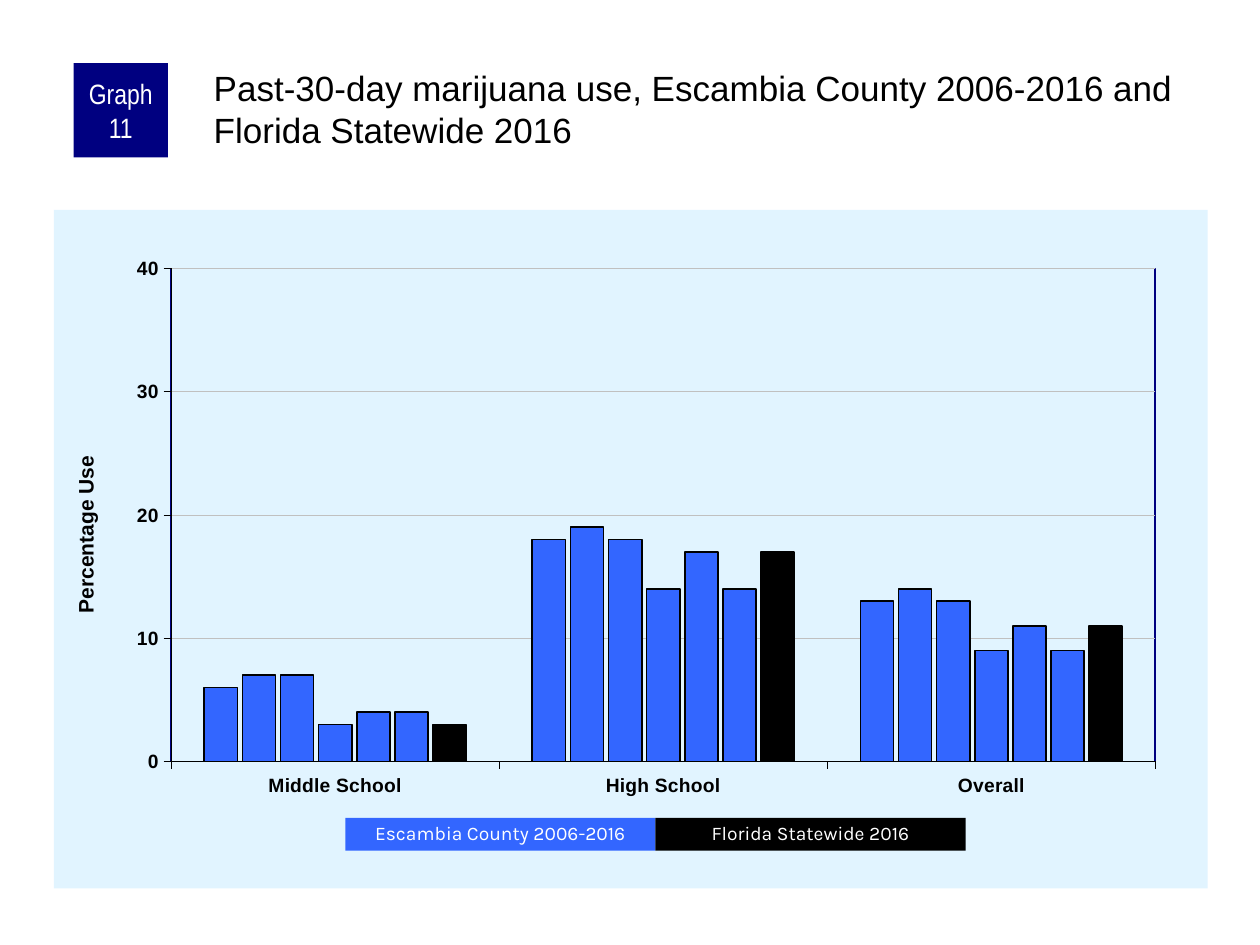
from dataclasses import dataclass

from lxml.etree import SubElement
from pptx import Presentation
from pptx.chart.data import CategoryChartData
from pptx.dml.color import RGBColor
from pptx.enum.chart import XL_CHART_TYPE, XL_TICK_MARK
from pptx.enum.shapes import MSO_SHAPE
from pptx.enum.text import MSO_ANCHOR, PP_ALIGN
from pptx.oxml import parse_xml
from pptx.oxml.ns import nsdecls, qn
from pptx.util import Inches, Pt

COLUMNS_PER_INCH = 12


@dataclass(frozen=True)
class Theme:
    """Colours, fonts and type sizes of the slide."""
    navy: str = "000080"
    blue: str = "3366FF"
    black: str = "000000"
    white: str = "FFFFFF"
    panel: str = "E1F4FF"
    grid: str = "C0C0C0"
    body: str = "Arial"
    narrow: str = "Arial Narrow"
    legend: str = "Karla"
    title_size: float = 20
    badge_size: float = 16
    axis_title_size: float = 12
    label_size: float = 11
    chart_size: float = 8


@dataclass(frozen=True)
class Box:
    """A rectangle in grid columns and rows."""
    left: float
    top: float
    width: float
    height: float

    def inner(self, left, top, width, height):
        """Return a box offset from this one's corner."""
        return Box(self.left + left, self.top + top, width, height)

    def place(self):
        """Return left, top, width and height as slide lengths."""
        sides = (self.left, self.top, self.width, self.height)
        return [Inches(side / COLUMNS_PER_INCH) for side in sides]


THEME = Theme()
CATEGORIES = ("Middle School", "High School", "Overall")
COUNTY_VALUES = (
    (6, 18, 13), (7, 19, 14), (7, 18, 13),
    (3, 14, 9), (4, 17, 11), (4, 14, 9),
)
STATE_VALUES = (3, 17, 11)


def style_font(font, name, size, color, bold=False):
    """Set the face, size, colour and weight of a font."""
    font.name, font.size, font.bold = name, Pt(size), bold
    font.color.rgb = RGBColor.from_string(color)


def style_line(line, color, width):
    """Set the colour and width of a line."""
    line.color.rgb = RGBColor.from_string(color)
    line.width = Pt(width)


def set_margins(frame, left, top, right, bottom):
    """Set the insets of a text frame in inches."""
    frame.margin_left, frame.margin_top = Inches(left), Inches(top)
    frame.margin_right, frame.margin_bottom = Inches(right), Inches(bottom)


def add_label(page, box, text, fill, face, size):
    """Draw a filled rectangle with centred white text and return it."""
    shape = page.shapes.add_shape(MSO_SHAPE.RECTANGLE, *box.place())
    shape.shadow.inherit = False
    shape.fill.solid()
    shape.fill.fore_color.rgb = RGBColor.from_string(fill)
    shape.line.fill.background()
    frame = shape.text_frame
    frame.word_wrap = True
    frame.vertical_anchor = MSO_ANCHOR.MIDDLE
    para = frame.paragraphs[0]
    para.text, para.alignment = text, PP_ALIGN.CENTER
    style_font(para.font, face, size, THEME.white)
    return shape


def add_header(page, box):
    """Place the graph badge and the title beside it."""
    badge = add_label(page, box.inner(0, 0, 9, 9), "Graph 11",
                      THEME.navy, THEME.narrow, THEME.badge_size)
    set_margins(badge.text_frame, 0.05, 0, 0.05, 0)
    title_box = box.inner(13, 0, box.width - 13, box.height)
    frame = page.shapes.add_textbox(*title_box.place()).text_frame
    frame.word_wrap = True
    set_margins(frame, 0.03, 0.03, 0, 0)
    para = frame.paragraphs[0]
    para.text = ("Past-30-day marijuana use, Escambia County 2006-2016 "
                 "and Florida Statewide 2016")
    style_font(para.font, THEME.body, THEME.title_size, THEME.black)


def set_layout(parent, index, box, left, top, width=None, height=None):
    """Place a chart part by grid columns and rows inside the chart's box."""
    for old in parent.findall(qn("c:layout")):
        parent.remove(old)
    layout = parse_xml(f"<c:layout {nsdecls('c')}/>")
    manual = SubElement(layout, qn("c:manualLayout"))
    places = {"x": left / box.width, "y": top / box.height}
    if width:
        places.update(w=width / box.width, h=height / box.height)
        SubElement(manual, qn("c:layoutTarget")).set("val", "inner")
    for side in ("x", "y"):
        SubElement(manual, qn(f"c:{side}Mode")).set("val", "edge")
    for side, share in places.items():
        SubElement(manual, qn(f"c:{side}")).set("val", str(share))
    parent.insert(index, layout)


def style_areas(chart, box):
    """Fill the chart panel and frame the plot."""
    space = chart.element
    space.find(qn("c:chart")).addnext(parse_xml(
        f'<c:spPr {nsdecls("c", "a")}><a:solidFill><a:srgbClr val="{THEME.panel}"/>'
        '</a:solidFill><a:ln><a:noFill/></a:ln></c:spPr>'))
    plot_area = space.find(".//" + qn("c:plotArea"))
    set_layout(plot_area, 0, box, 11.18, 5.56, 93.74, 46.97)
    plot_area.append(parse_xml(
        f'<c:spPr {nsdecls("c", "a")}><a:noFill/><a:ln w="{Pt(1)}"><a:solidFill>'
        f'<a:srgbClr val="{THEME.navy}"/></a:solidFill></a:ln></c:spPr>'))


def style_axes(chart, box):
    """Style both axes, the gridlines and the value title."""
    for axis in (chart.category_axis, chart.value_axis):
        axis.major_tick_mark = XL_TICK_MARK.OUTSIDE
        axis.minor_tick_mark = XL_TICK_MARK.NONE
        style_font(axis.tick_labels.font, THEME.body, THEME.label_size, THEME.black, True)
        style_line(axis.format.line, THEME.black, 0.25)
    values = chart.value_axis
    values.minimum_scale, values.maximum_scale, values.major_unit = 0, 40, 10
    values.tick_labels.number_format = "0"
    values.tick_labels.number_format_is_linked = False
    style_line(values.major_gridlines.format.line, THEME.grid, 0.25)
    title = values.axis_title
    para = title.text_frame.paragraphs[0]
    para.text = "Percentage Use"
    style_font(para.font, THEME.body, THEME.axis_title_size, THEME.black, True)
    set_layout(title.element, 1, box, 1.45, 23.05)


def add_chart(page, box):
    """Place the clustered column chart."""
    data = CategoryChartData()
    data.categories = CATEGORIES
    for number, values in enumerate((*COUNTY_VALUES, STATE_VALUES), 1):
        data.add_series(f"Series {number}", values)
    chart = page.shapes.add_chart(XL_CHART_TYPE.COLUMN_CLUSTERED, *box.place(), data).chart
    chart.has_legend = chart.has_title = False
    style_font(chart.font, THEME.body, THEME.chart_size, THEME.black)
    plot = chart.plots[0]
    plot.gap_width, plot.overlap, plot.vary_by_categories = 200, -15, False
    colors = [THEME.blue] * len(COUNTY_VALUES) + [THEME.black]
    for series, color in zip(plot.series, colors):
        series.format.fill.solid()
        series.format.fill.fore_color.rgb = RGBColor.from_string(color)
        style_line(series.format.line, THEME.black, 1)
    style_areas(chart, box)
    style_axes(chart, box)


def add_legend(page, box):
    """Place the two legend labels side by side."""
    entries = (("Escambia County 2006-2016", THEME.blue),
               ("Florida Statewide 2016", THEME.black))
    width = box.width / len(entries)
    for index, (text, color) in enumerate(entries):
        label = add_label(page, box.inner(index * width, 0, width, box.height),
                          text, color, THEME.legend, THEME.label_size)
        label.text_frame.paragraphs[0].line_spacing = 0.9


def main():
    """Build and save the deck."""
    deck = Presentation()
    deck.slide_width, deck.slide_height = Inches(10), Inches(7.5)
    page = deck.slides.add_slide(deck.slide_layouts[6])
    panel = Box(5.12, 20, 109.9, 64.6)
    add_chart(page, panel)
    add_header(page, Box(7, 6, 108, 10))
    add_legend(page, panel.inner(27.76, 57.9, 59.1, 3.12))
    deck.save("out.pptx")


if __name__ == "__main__":
    main()
